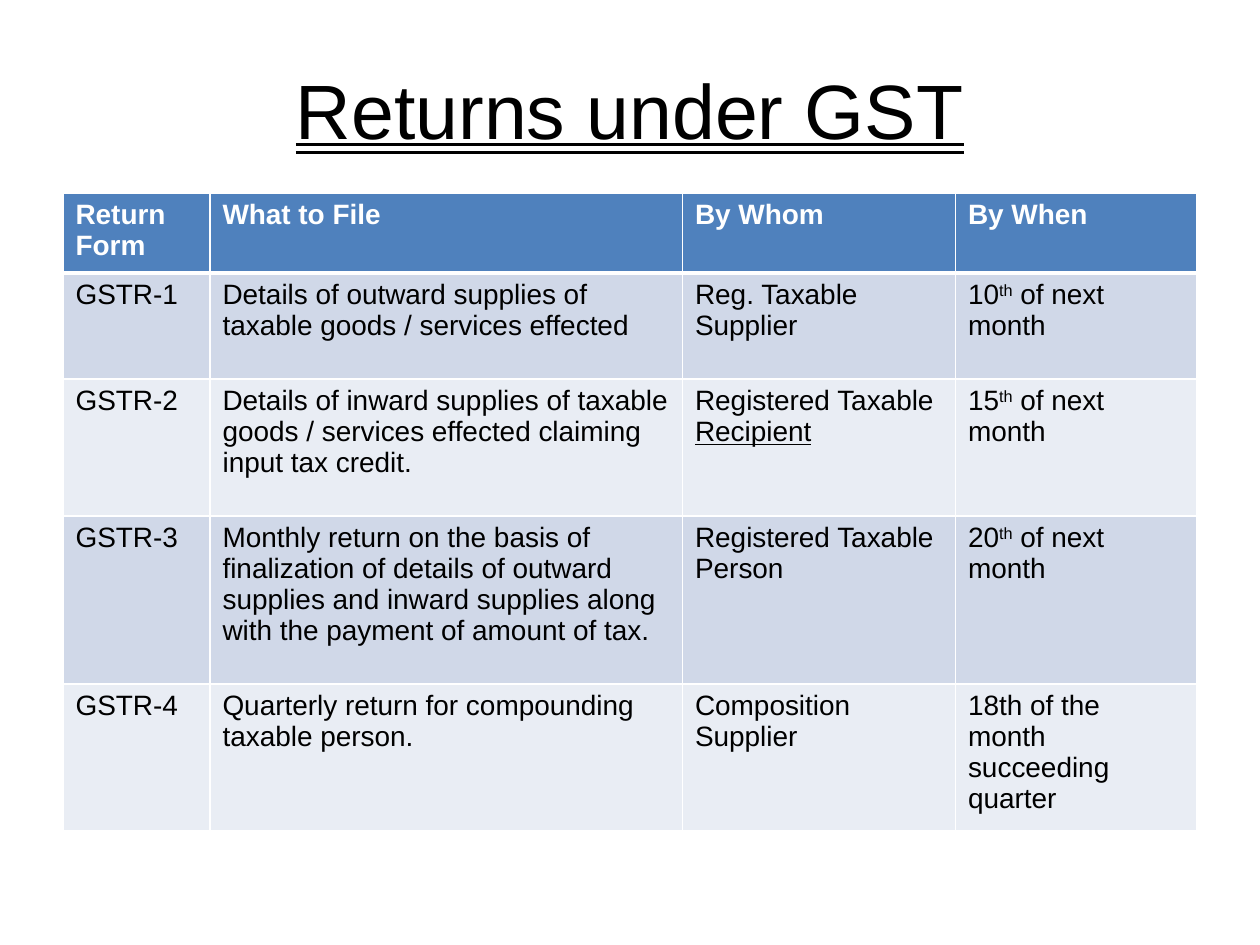
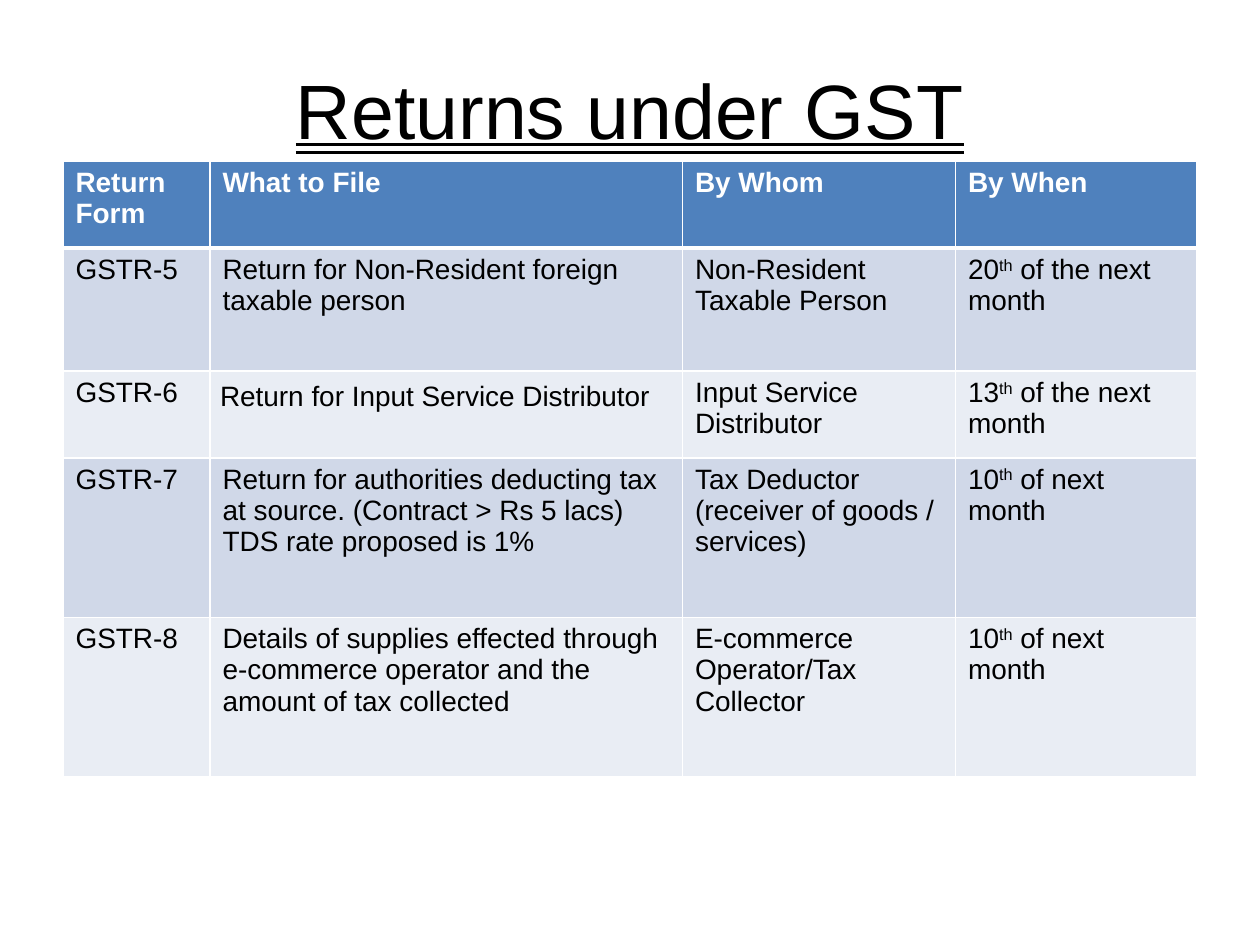
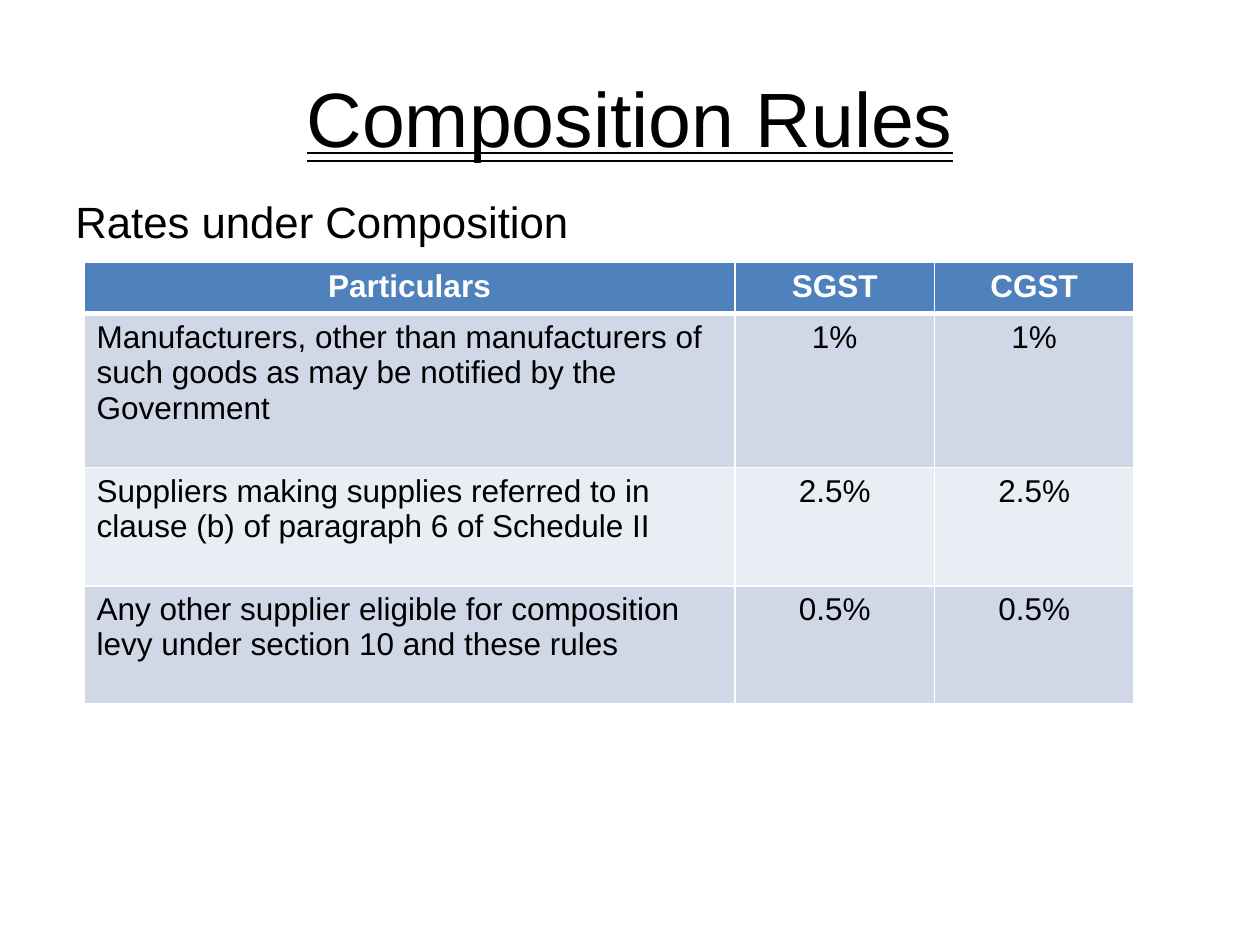
from lxml.etree import SubElement
from pptx import Presentation
from pptx.dml.color import RGBColor
from pptx.enum.text import MSO_ANCHOR as Anchor, MSO_UNDERLINE as Underline, PP_ALIGN as Align
from pptx.oxml import parse_xml
from pptx.oxml.ns import nsdecls, qn
from pptx.util import Pt

COLOURS = {
    "text": "000000",
    "line": "FFFFFF",
    "header_text": "FFFFFF",
    "header": "4F81BD",
    "odd_row": "D0D8E8",
    "even_row": "E9EDF4",
}
FONT = "Arial"
MARGIN = 36
CONTENT_WIDTH = 648


def rgb(name):
    return RGBColor.from_string(COLOURS[name])


def write(frame, content, size=16, colour="text", bold=False, underline=None,
          align=Align.LEFT, before=0, hanging=0):
    """Fill a text frame.

    A tuple holds paragraphs, a list holds the spans of one paragraph, and a
    span is a string or a pair of a string and "super" or "underline".
    """
    frame.word_wrap = True
    paragraphs = content if isinstance(content, tuple) else (content,)
    for index, spans in enumerate(paragraphs):
        para = frame.add_paragraph() if index else frame.paragraphs[0]
        para.alignment = align
        para.space_before = Pt(before)
        if hanging:
            properties = para._p.get_or_add_pPr()
            properties.set("marL", str(Pt(hanging)))
            properties.set("indent", str(-Pt(hanging)))
        for part in spans if isinstance(spans, list) else [spans]:
            text, mark = part if isinstance(part, tuple) else (part, None)
            span = para.add_run()
            span.text = text
            span.font.name = FONT
            span.font.size = Pt(size)
            span.font.bold = bold
            span.font.color.rgb = rgb(colour)
            span.font.underline = True if mark == "underline" else underline
            if mark == "super":
                span._r.get_or_add_rPr().set("baseline", "30000")


def set_borders(cell, **widths):
    """Draw cell borders; the keywords are L, R, T and B, in that order."""
    properties = cell._tc.get_or_add_tcPr()
    for index, (side, width) in enumerate(widths.items()):
        line = parse_xml(f'<a:ln{side} {nsdecls("a")} w="{Pt(width)}"/>')
        fill = SubElement(line, qn("a:solidFill"))
        SubElement(fill, qn("a:srgbClr"), val=COLOURS["line"])
        properties.insert(index, line)


def due(day, rest=" of next month"):
    return [day, ("th", "super"), rest]


class Slides:
    def __init__(self):
        self.deck = Presentation()
        self.deck.slide_width, self.deck.slide_height = Pt(720), Pt(540)
        self.page = None

    def start(self, title, title_height=80.64):
        self.page = self.deck.slides.add_slide(self.deck.slide_layouts[6])
        self.text(title, 21.6, title_height, Anchor.MIDDLE, size=44,
                  underline=Underline.DOUBLE_LINE, align=Align.CENTER)

    def text(self, content, top, height, anchor=Anchor.TOP, **style):
        box = self.page.shapes.add_textbox(Pt(MARGIN), Pt(top), Pt(CONTENT_WIDTH), Pt(height))
        box.text_frame.vertical_anchor = anchor
        write(box.text_frame, content, **style)

    def table(self, rows, left, top, widths, heights, size=16, aligns=None, header_align=Align.LEFT):
        aligns = aligns or [Align.LEFT] * len(widths)
        table = self.page.shapes.add_table(
            len(rows), len(widths), Pt(left), Pt(top), Pt(sum(widths)), Pt(sum(heights))).table
        for column, width in zip(table.columns, widths):
            column.width = Pt(width)
        for row, height in zip(table.rows, heights):
            row.height = Pt(height)
        for r, row in enumerate(rows):
            header = r == 0
            fill = "header" if header else "odd_row" if r % 2 else "even_row"
            for c, content in enumerate(row):
                cell = table.cell(r, c)
                cell.fill.solid()
                cell.fill.fore_color.rgb = rgb(fill)
                set_borders(cell, L=1, R=1, T=3 if r == 1 else 1, B=3 if header else 1)
                write(cell.text_frame, content, size=size, bold=header,
                      colour="header_text" if header else "text",
                      align=header_align if header else aligns[c])
        return table


RETURN_HEADER = ["Return Form", "What to File", "By Whom", "By When"]
RETURN_WIDTHS = [84, 270, 156, 138]
RETURNS_1_TO_4 = [
    ["GSTR-1", "Details of outward supplies of taxable goods / services effected",
     "Reg. Taxable Supplier", due("10")],
    ["GSTR-2", "Details of inward supplies of taxable goods / services effected "
     "claiming input tax credit.",
     ["Registered Taxable ", ("Recipient", "underline")], due("15")],
    ["GSTR-3", "Monthly return on the basis of finalization of details of outward supplies "
     "and inward supplies along with the payment of amount of tax.",
     "Registered Taxable Person", due("20")],
    ["GSTR-4", "Quarterly return for compounding taxable person.",
     "Composition Supplier", "18th of the month succeeding quarter"],
]
RETURNS_5_TO_8 = [
    ["GSTR-5", "Return for Non-Resident foreign taxable person",
     "Non-Resident Taxable Person", due("20", " of the next month")],
    ["GSTR-6", "Return for Input Service Distributor",
     "Input Service Distributor", due("13", " of the next month")],
    ["GSTR-7", ("Return for authorities deducting tax at source. (Contract > Rs 5 lacs)",
                "TDS rate proposed is 1%"),
     "Tax Deductor (receiver of goods / services)", due("10")],
    ["GSTR-8", "Details of supplies effected through e-commerce operator and the amount "
     "of tax collected",
     "E-commerce Operator/Tax Collector", due("10")],
]
COMPOSITION_RATES = [
    ["Particulars", "SGST", "CGST"],
    ["Manufacturers, other than manufacturers of such goods as may be notified by the Government",
     "1%", "1%"],
    ["Suppliers making supplies referred to in clause (b) of paragraph 6 of Schedule II",
     "2.5%", "2.5%"],
    ["Any other supplier eligible for composition levy under section 10 and these rules",
     "0.5%", "0.5%"],
]


def main():
    slides = Slides()

    slides.start("Returns under GST")
    slides.table([RETURN_HEADER] + RETURNS_1_TO_4, MARGIN, 110.4, RETURN_WIDTHS,
                 [42.6, 60.5, 78.3, 96, 78.3])

    slides.start("Returns under GST")
    returns = slides.table([RETURN_HEADER] + RETURNS_5_TO_8, MARGIN, 92.2, RETURN_WIDTHS,
                           [49.5, 70.4, 49.5, 91.2, 91.2])
    distributor = returns.cell(2, 1)
    distributor.margin_left = distributor.margin_right = Pt(5.76)
    distributor.margin_top = distributor.margin_bottom = Pt(5.76)

    slides.start("Composition Rules", title_height=90)
    slides.text("Rates under Composition", 108, 374.4, size=25, before=4, hanging=27)
    slides.table(COMPOSITION_RATES, 48, 150, [372, 114, 114], [29.2, 88, 67.6, 67.6], size=18,
                 aligns=[Align.LEFT, Align.CENTER, Align.CENTER], header_align=Align.CENTER)

    slides.deck.save("out.pptx")


if __name__ == "__main__":
    main()
